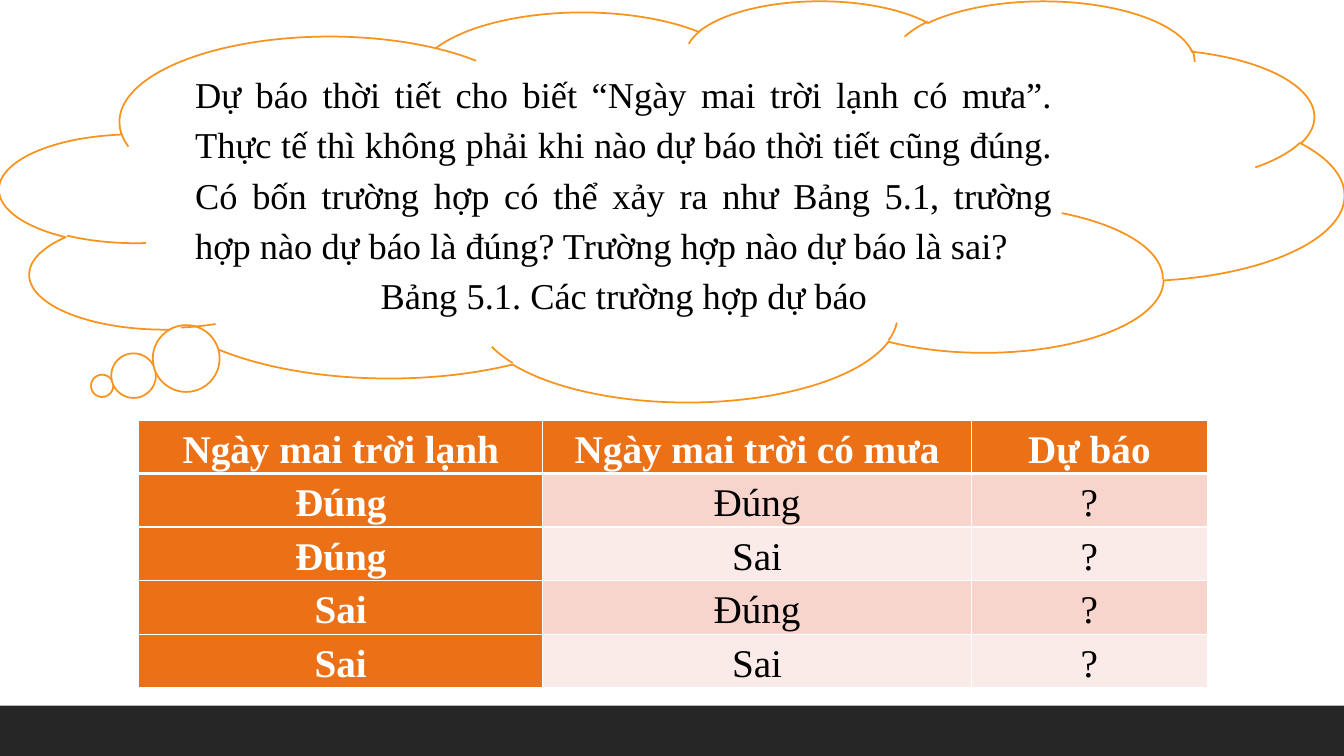
from dataclasses import dataclass

from lxml import etree
from pptx import Presentation
from pptx import util as u
from pptx.dml.color import RGBColor
from pptx.enum import shapes, text
from pptx.oxml import ns

SCALE = 9525  # EMU per px, 96 px to the inch


@dataclass(frozen=True)
class Theme:
    font: str = "Times New Roman"
    ink: str = "000000"
    paper: str = "FFFFFF"
    footer: str = "262626"
    outline: str = "F8931D"
    head: str = "EC7016"
    bands: tuple = ("F8D5CC", "FBEBE8")
    story_size: int = 26
    table_size: int = 28
    spacing: float = 1.15


THEME = Theme()
STORY = (
    "Dự báo thời tiết cho biết “Ngày mai trời lạnh có mưa”. "
    "Thực tế thì không phải khi nào dự báo thời tiết cũng đúng. "
    "Có bốn trường hợp có thể xảy ra như Bảng 5.1, trường hợp nào "
    "dự báo là đúng? Trường hợp nào dự báo là sai?"
)
CAPTION = "Bảng 5.1. Các trường hợp dự báo"
FORECASTS = [
    ("Ngày mai trời lạnh", "Ngày mai trời có mưa", "Dự báo"),
    ("Đúng", "Đúng", "?"),
    ("Đúng", "Sai", "?"),
    ("Sai", "Đúng", "?"),
    ("Sai", "Sai", "?"),
]


def px(*lengths):
    return [u.Emu(length * SCALE) for length in lengths]


def paint(fill, color):
    fill.solid()
    fill.fore_color.rgb = RGBColor.from_string(color)


def write(para, words, size, color=THEME.ink, bold=False, align=text.PP_ALIGN.CENTER):
    para.alignment = align
    para.line_spacing = THEME.spacing
    span = para.add_run()
    span.text = words
    span.font.name = THEME.font
    span.font.size = u.Pt(size)
    span.font.bold = bold
    span.font.color.rgb = RGBColor.from_string(color)


def add_block(page, kind, box, color):
    block = page.shapes.add_shape(kind, *px(*box))
    block.shadow.inherit = False
    paint(block.fill, color)
    block.line.fill.background()
    return block


def add_border(cell, side, points):
    line = etree.SubElement(cell._tc.get_or_add_tcPr(), ns.qn(f"a:ln{side}"), w=str(u.Pt(points)))
    fill = etree.SubElement(line, ns.qn("a:solidFill"))
    etree.SubElement(fill, ns.qn("a:srgbClr"), val=THEME.paper)


# Thought cloud with the story and the table caption
def add_cloud(page, box):
    cloud = add_block(page, shapes.MSO_SHAPE.CLOUD_CALLOUT, box, THEME.paper)
    cloud.adjustments[0], cloud.adjustments[1] = -0.424, 0.462
    paint(cloud.line.fill, THEME.outline)
    cloud.line.width = u.Pt(1.25)
    frame = cloud.text_frame
    frame.word_wrap = True
    frame.auto_size = text.MSO_AUTO_SIZE.SHAPE_TO_FIT_TEXT
    frame.vertical_anchor = text.MSO_ANCHOR.MIDDLE
    write(frame.paragraphs[0], STORY, THEME.story_size, align=text.PP_ALIGN.JUSTIFY)
    write(frame.add_paragraph(), CAPTION, THEME.story_size)


def format_cell(cell, words, row, column):
    # A thick rule separates the header from the body
    edges = {"L": 1, "R": 1, "T": 3 if row == 1 else 1, "B": 3 if row == 0 else 1}
    for side, points in edges.items():
        add_border(cell, side, points)
    heading = row == 0 or column == 0
    paint(cell.fill, THEME.head if heading else THEME.bands[(row - 1) % 2])
    cell.vertical_anchor = text.MSO_ANCHOR.MIDDLE
    cell.margin_left, cell.margin_right, cell.margin_top, cell.margin_bottom = px(7, 7, 0, 0)
    color = THEME.paper if heading else THEME.ink
    write(cell.text_frame.paragraphs[0], words, THEME.table_size, color, bold=heading)


# Table of forecast cases
def add_forecasts(page, box, widths):
    table = page.shapes.add_table(len(FORECASTS), len(widths), *px(*box)).table
    for column, width in zip(table.columns, px(*widths)):
        column.width = width
    for row, line in enumerate(FORECASTS):
        table.rows[row].height = px(box[3] // len(FORECASTS))[0]
        for column, words in enumerate(line):
            format_cell(table.cell(row, column), words, row, column)


def main():
    deck = Presentation()
    deck.slide_width, deck.slide_height = px(1280, 720)
    page = deck.slides.add_slide(deck.slide_layouts[6])
    add_block(page, shapes.MSO_SHAPE.RECTANGLE, (0, 672, 1280, 48), THEME.footer)
    add_forecasts(page, (132, 400, 1018, 255), (385, 408, 225))
    add_cloud(page, (0, 0, 1280, 382))
    deck.save("out.pptx")


if __name__ == "__main__":
    main()
